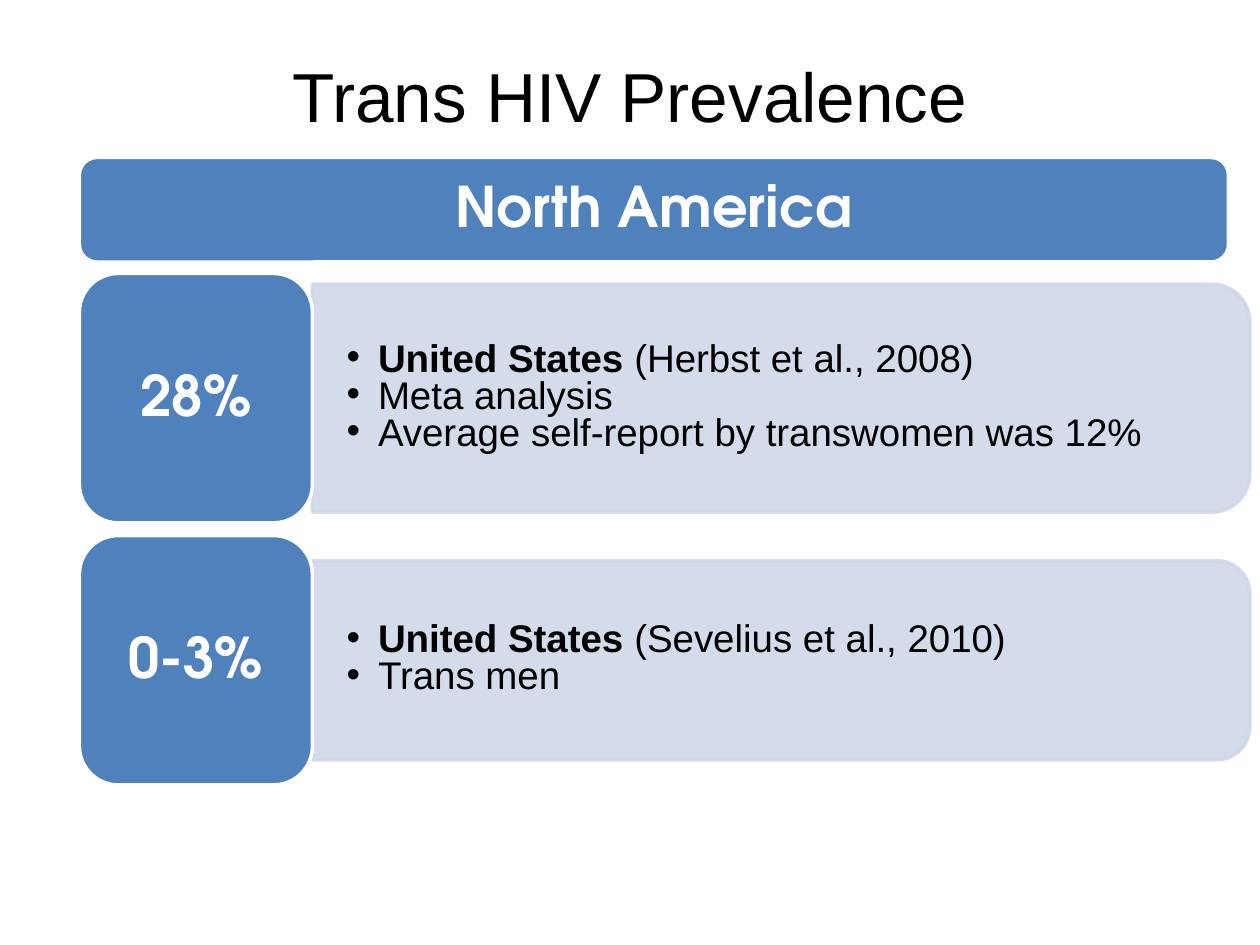
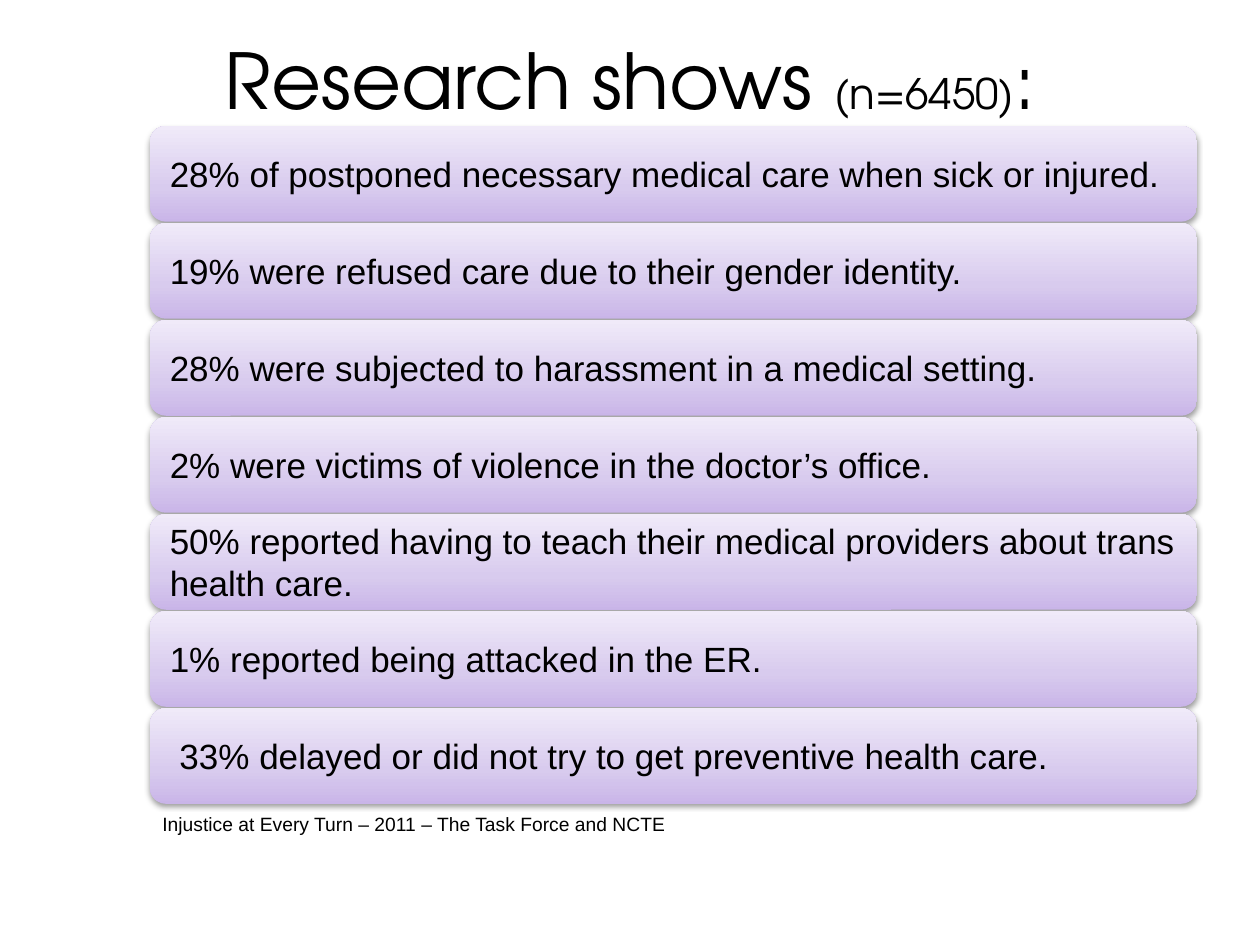
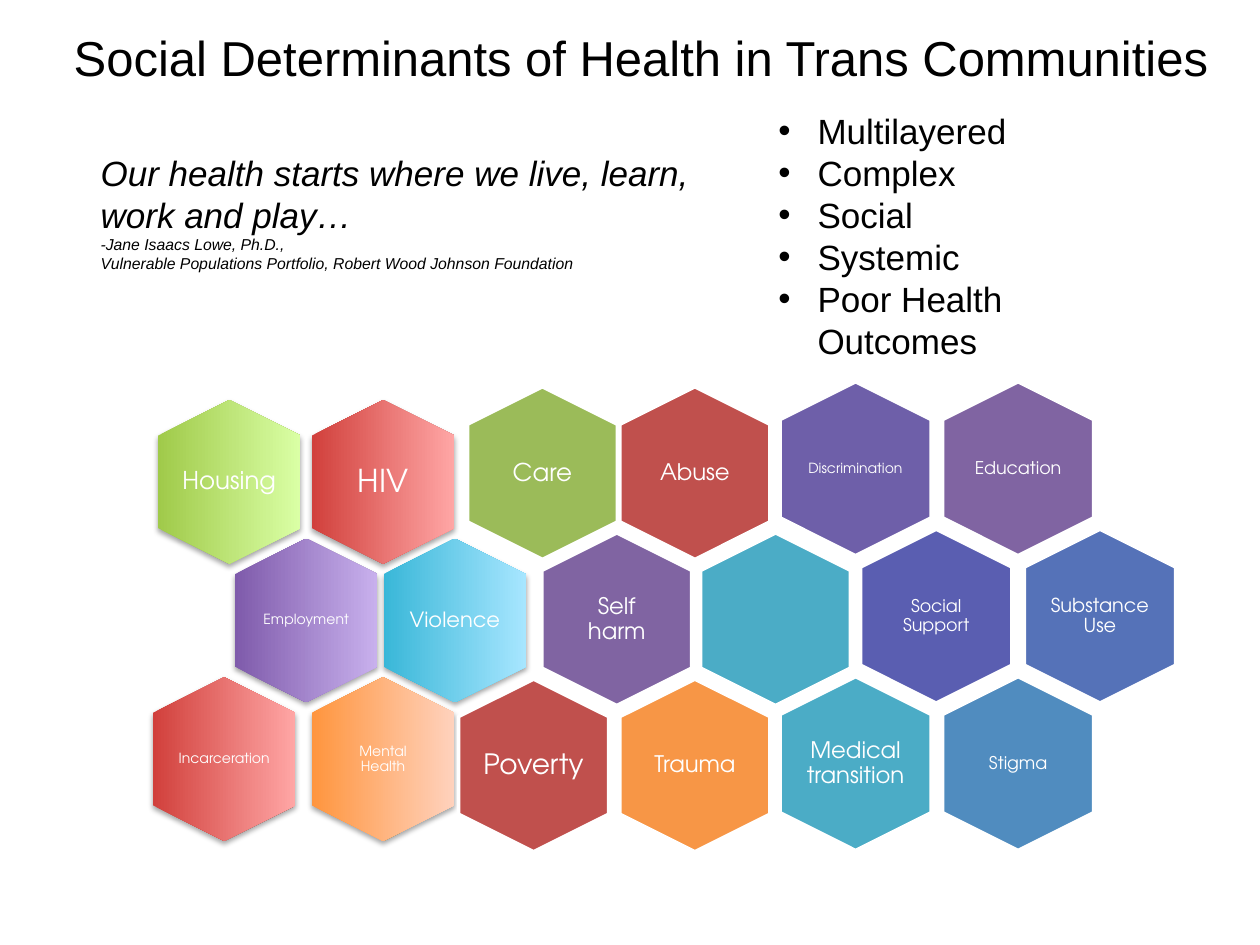
from dataclasses import dataclass

from pptx import Presentation
from pptx import util as u
from pptx.dml.color import RGBColor
from pptx.enum import shapes, text
from pptx.oxml import parse_xml
from pptx.oxml.ns import nsdecls, qn

COLORS = {
    "black": "000000", "white": "FFFFFF", "blue": "4F81BD", "panel": "D0D8E8",
    "red": "C0504D", "green": "9BBB59", "purple": "8064A2", "aqua": "4BACC6",
    "orange": "F79646", "violet": "6E5FA9", "indigo": "5A5EB1",
    "royal": "5572B8", "sky": "508CBF",
}
GRADIENTS = {
    "lavender": ((0, "C9B5E8"), (35, "D8CBEE"), (100, "F0EAF9")),
    "red fade": ((0, "D1403C"), (100, "FFA6A5")),
    "green fade": ((0, "A0CA4A"), (100, "DAFFA5")),
    "purple fade": ((0, "7F5BAB"), (100, "C8B0ED")),
    "aqua fade": ((0, "39B7D8"), (100, "A7E6FF")),
    "orange fade": ((0, "FF953E"), (100, "FFD2BD")),
}
SANS, DISPLAY = "Arial", "TeX Gyre Adventor"
LEFT, CENTER, JUSTIFY = text.PP_ALIGN.LEFT, text.PP_ALIGN.CENTER, text.PP_ALIGN.JUSTIFY
TOP, MIDDLE = text.MSO_ANCHOR.TOP, text.MSO_ANCHOR.MIDDLE
AUTO = shapes.MSO_SHAPE


@dataclass(frozen=True)
class Run:
    text: str
    size: float
    font: str = SANS
    color: str = "black"
    bold: bool = False
    italic: bool = False


@dataclass(frozen=True)
class Para:
    runs: tuple[Run, ...]
    align: int = LEFT
    spacing: float = 1.0
    indent: float = 0


@dataclass(frozen=True)
class Box:
    left: float
    top: float
    width: float
    height: float

    def lengths(self) -> list[int]:
        return [u.Inches(v) for v in (self.left, self.top, self.width, self.height)]


@dataclass(frozen=True)
class Finding:
    rate: str
    middle: float
    height: float
    place: str
    source: str
    notes: tuple[str, ...]


@dataclass(frozen=True)
class Hexagon:
    row: int
    left: float
    label: str
    size: int
    fill: str
    inset: float = 0


@dataclass(frozen=True)
class Cluster:
    width: float
    height: float
    top: float
    step: float
    hexagons: tuple[Hexagon, ...]


FINDINGS = (
    Finding("28%", 3.16, 1.81, "United States ", "(Herbst et al., 2008)",
            ("Meta analysis", "Average self-report by transwomen was 12%")),
    Finding("0-3%", 5.24, 1.58, "United States ", "(Sevelius et al., 2010)", ("Trans men",)),
)
STATEMENTS = (
    "28% of postponed necessary medical care when sick or injured.",
    "19% were refused care due to their gender identity.",
    "28% were subjected to harassment in a medical setting.",
    "2% were victims of violence in the doctor’s office.",
    "50% reported having to teach their medical providers about trans health care.",
    "1% reported being attacked in the ER.",
    " 33% delayed or did not try to get preventive health care.",
)
CLUSTERS = (
    Cluster(1.3, 1.13, 3.26, 1.1, (
        Hexagon(0, 2.39, "HIV", 18, "red fade"),
        Hexagon(0, 1.17, "Housing", 14, "green fade"),
        Hexagon(1, 1.78, "Employment", 8, "purple fade"),
        Hexagon(1, 2.96, "Violence", 12, "aqua fade"),
        Hexagon(2, 2.39, "Mental Health", 8, "orange fade", 0.03),
        Hexagon(2, 1.13, "Incarceration", 8, "red fade"),
    )),
    Cluster(1.38, 1.2, 3.12, 1.17, (
        Hexagon(0, 7.39, "Education", 10, "purple"),
        Hexagon(0, 6.1, "Discrimination", 8, "violet"),
        Hexagon(1, 6.74, "Social Support", 10, "indigo", 0.04),
        Hexagon(1, 8.04, "Substance Use", 11, "royal"),
        Hexagon(2, 7.39, "Stigma", 10, "sky"),
        Hexagon(2, 6.1, "Medical transition", 13, "aqua"),
    )),
    Cluster(1.37, 1.19, 3.16, 1.16, (
        Hexagon(0, 4.83, "Abuse", 13, "red"),
        Hexagon(0, 3.62, "Care", 14, "green"),
        Hexagon(1, 4.21, "Self harm", 13, "purple", 0.05),
        Hexagon(1, 5.47, "", 13, "aqua"),
        Hexagon(2, 4.83, "Trauma", 13, "orange"),
        Hexagon(2, 3.55, "Poverty", 16, "red"),
    )),
)
TOPICS = ("Multilayered", "Complex", "Social", "Systemic", "Poor Health Outcomes")


def rgb(name: str) -> RGBColor:
    return RGBColor.from_string(COLORS[name])


def write(s, paras: list[Para], anchor=MIDDLE, inset: tuple[float, float] = (0.1, 0.05)) -> None:
    tf = s.text_frame
    x, y = (u.Inches(v) for v in inset)
    frame = {"word_wrap": True, "vertical_anchor": anchor, "margin_left": x,
             "margin_right": x, "margin_top": y, "margin_bottom": y}
    for key, value in frame.items():
        setattr(tf, key, value)
    for i, para in enumerate(paras):
        p = tf.add_paragraph() if i else tf.paragraphs[0]
        p.alignment, p.line_spacing = para.align, para.spacing
        if para.indent:
            pPr = p._p.get_or_add_pPr()
            pPr.set("marL", str(u.Inches(para.indent)))
            pPr.set("indent", str(-u.Inches(para.indent)))
            pPr.append(parse_xml(f'<a:buFont {nsdecls("a")} typeface="{SANS}"/>'))
            pPr.append(parse_xml(f'<a:buChar {nsdecls("a")} char="•"/>'))
        for run in para.runs:
            r = p.add_run()
            r.text = run.text
            style = {"name": run.font, "size": u.Pt(run.size),
                     "bold": run.bold, "italic": run.italic}
            for key, value in style.items():
                setattr(r.font, key, value)
            r.font.color.rgb = rgb(run.color)


def add_text(slide, box: Box, paras: list[Para], anchor=MIDDLE,
             inset: tuple[float, float] = (0.1, 0.05)) -> None:
    write(slide.shapes.add_textbox(*box.lengths()), paras, anchor, inset)


def add_title(slide, box: Box, runs: tuple[Run, ...], anchor=MIDDLE,
              inset: tuple[float, float] = (0.1, 0.05)) -> None:
    add_text(slide, box, [Para(runs, CENTER)], anchor, inset)


def white_label(label: str, size: int, bold: bool = False) -> Para:
    return Para((Run(label, size, DISPLAY, "white", bold),), CENTER, 0.9)


def add_solid(slide, kind, box: Box, fill: str, line: str = "white"):
    s = slide.shapes.add_shape(kind, *box.lengths())
    s.shadow.inherit = False
    s.fill.solid()
    s.fill.fore_color.rgb = rgb(fill)
    s.line.color.rgb = rgb(line)
    s.line.width = u.Pt(2)
    return s


def add_faded(slide, kind, box: Box, fill: str, shade: int, drop: float):
    s = slide.shapes.add_shape(kind, *box.lengths())
    s.shadow.inherit = False
    s.line.fill.background()
    spPr = s._element.spPr
    stops = "".join(f'<a:gs pos="{pos * 1000}"><a:srgbClr val="{color}"/></a:gs>'
                    for pos, color in GRADIENTS[fill])
    spPr.find(qn("a:prstGeom")).addnext(parse_xml(
        f'<a:gradFill {nsdecls("a")} rotWithShape="1"><a:gsLst>{stops}</a:gsLst>'
        '<a:lin ang="16200000" scaled="0"/></a:gradFill>'))
    spPr.find(qn("a:effectLst")).append(parse_xml(
        f'<a:outerShdw {nsdecls("a")} blurRad="{u.Pt(3.1)}" dist="{u.Pt(drop)}" '
        f'dir="5400000" rotWithShape="0"><a:srgbClr val="{COLORS["black"]}">'
        f'<a:alpha val="{shade * 1000}"/></a:srgbClr></a:outerShdw>'))
    return s


def add_finding(slide, finding: Finding) -> None:
    middle, height, length = finding.middle, finding.height, 7.44
    panel = add_solid(slide, AUTO.ROUND_2_SAME_RECTANGLE,
                      Box(6.2 - height / 2, middle - length / 2, height, length),
                      "panel", "panel")
    panel.rotation = 90
    for color in panel._element.spPr.iter(qn("a:srgbClr")):
        color.append(parse_xml(f'<a:alpha {nsdecls("a")} val="90000"/>'))
    lines = [(Run(finding.place, 22, bold=True), Run(finding.source, 22))]
    lines += [(Run(note, 22),) for note in finding.notes]
    add_text(slide, Box(2.48, middle - height / 2 + 0.08, 7.35, height - 0.16),
             [Para(line, spacing=0.8, indent=0.25) for line in lines], inset=(0.27, 0.14))
    tile = add_solid(slide, AUTO.ROUNDED_RECTANGLE, Box(0.63, middle - 0.99, 1.85, 1.98), "blue")
    write(tile, [white_label(finding.rate, 32, True)], inset=(0.13, 0.07))


def add_hexagon(slide, cluster: Cluster, cell: Hexagon) -> None:
    width, height = cluster.width, cluster.height
    top = cluster.top + cell.row * cluster.step
    box = Box(cell.left, top, width, height)
    if cell.fill in GRADIENTS:
        s = add_faded(slide, AUTO.HEXAGON, box, cell.fill, 35, 1.8)
    else:
        s = add_solid(slide, AUTO.HEXAGON, box, cell.fill)
    s.adjustments[0], s.adjustments[1] = 0.25, 1.1547
    s.rotation = 90
    if cell.label:
        w, h = 0.6 * width, 0.69 * width
        add_text(slide, Box(cell.left + (width - w) / 2, top + (height - h) / 2, w, h),
                 [white_label(cell.label, cell.size)], inset=(cell.inset, cell.inset))


def prevalence(slide) -> None:
    add_title(slide, Box(0.5, 0.42, 9, 1.25), (Run("Trans HIV Prevalence", 39.6),), TOP, (0.1, 0))
    header = add_solid(slide, AUTO.ROUNDED_RECTANGLE, Box(0.63, 1.25, 9.12, 0.83), "blue")
    write(header, [white_label("North America", 32, True)], inset=(0.17, 0.13))
    for finding in FINDINGS:
        add_finding(slide, finding)


def research(slide) -> None:
    for i, statement in enumerate(STATEMENTS):
        bar = add_faded(slide, AUTO.ROUNDED_RECTANGLE, Box(1.19, 1 + 0.77 * i, 8.31, 0.76),
                        "lavender", 38, 1.6)
        write(bar, [Para((Run(statement, 20),))], inset=(0.12, 0))
    add_title(slide, Box(0.5, 0, 9, 1.25),
              (Run("Research shows ", 44, DISPLAY), Run("(n=6450)", 24, DISPLAY),
               Run(":", 44, DISPLAY)))
    add_text(slide, Box(1.19, 6.4, 8.25, 0.29),
             [Para((Run("Injustice at Every Turn – 2011 – The Task Force and NCTE", 11),))], TOP)


def determinants(slide) -> None:
    add_title(slide, Box(0.33, 0.19, 9.51, 0.52),
              (Run("Social Determinants of Health in Trans Communities", 28),))
    for cluster in CLUSTERS:
        for cell in cluster.hexagons:
            add_hexagon(slide, cluster, cell)
    add_text(slide, Box(6.08, 0.82, 3.08, 2.12),
             [Para((Run(topic, 20),), indent=0.31) for topic in TOPICS], TOP)
    quote = "Our health starts where we live, learn, work and play…"
    credits = ("-Jane Isaacs Lowe, Ph.D.,",
               "Vulnerable Populations Portfolio, Robert Wood Johnson Foundation")
    add_text(slide, Box(0.7, 1.15, 4.92, 1.08),
             [Para((Run(quote, 20, italic=True),))]
             + [Para((Run(credit, 9, italic=True),), JUSTIFY) for credit in credits], TOP)


def main() -> None:
    prs = Presentation()
    prs.slide_width, prs.slide_height = u.Inches(10), u.Inches(7.5)
    for build in (prevalence, research, determinants):
        build(prs.slides.add_slide(prs.slide_layouts[6]))
    prs.save("out.pptx")


if __name__ == "__main__":
    main()
